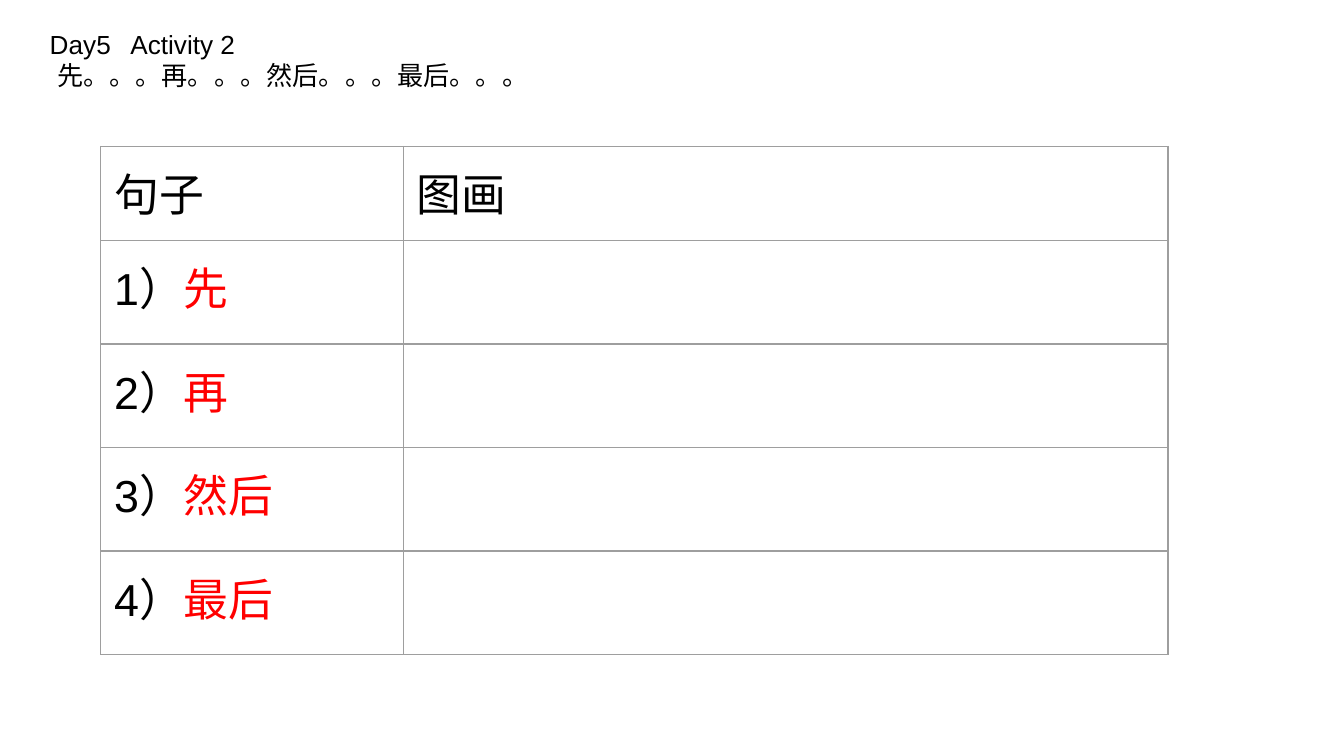
"""Build the Day5 activity slide: a heading and a sentence and drawing table."""
from lxml.etree import SubElement
from pptx import Presentation
from pptx.dml.color import RGBColor
from pptx.enum.text import MSO_ANCHOR, MSO_AUTO_SIZE, PP_ALIGN
from pptx.oxml.ns import qn
from pptx.util import Inches, Pt

TITLE = "Day5\tActivity 2\v 先。。。再。。。然后。。。最后。。。"
HEADERS = ["句子", "图画"]
SEQUENCE_WORDS = ["先", "再", "然后", "最后"]

FONT = "Arial"
BLACK = RGBColor(0x00, 0x00, 0x00)
RED = RGBColor(0xFF, 0x00, 0x00)
GRAY = RGBColor(0x9E, 0x9E, 0x9E)
MARGIN = Inches(0.1)
COLUMN_WIDTHS = [Inches(2.25), Inches(5.69)]
HEADER_HEIGHT, ROW_HEIGHT = Inches(0.7), Inches(0.77)


def set_font(paragraph, size):
    paragraph.font.name = FONT
    paragraph.font.size = Pt(size)


def set_margins(target):
    target.margin_left = target.margin_right = MARGIN
    target.margin_top = target.margin_bottom = MARGIN


def add_run(paragraph, text, color):
    run = paragraph.add_run()
    run.text = text
    run.font.color.rgb = color


def add_borders(cell):
    properties = cell._tc.get_or_add_tcPr()
    for position, side in enumerate(("lnL", "lnR", "lnT", "lnB")):
        line = properties.makeelement(qn(f"a:{side}"), {"w": str(Pt(0.75))})
        fill = SubElement(line, qn("a:solidFill"))
        SubElement(fill, qn("a:srgbClr"), val=str(GRAY))
        properties.insert(position, line)


def add_title(slide):
    title = slide.shapes.title
    title.left, title.top = Inches(0.27), Inches(0.11)
    title.width, title.height = Inches(9.32), Inches(0.63)
    frame = title.text_frame
    set_margins(frame)
    frame.word_wrap = True
    frame.auto_size = MSO_AUTO_SIZE.NONE
    frame.vertical_anchor = MSO_ANCHOR.TOP
    frame.text = TITLE
    paragraph = frame.paragraphs[0]
    tabs = SubElement(paragraph._p.get_or_add_pPr(), qn("a:tabLst"))
    SubElement(tabs, qn("a:tab"), pos=str(Inches(0.6)), algn="l")
    paragraph.alignment = PP_ALIGN.LEFT
    set_font(paragraph, 14)
    paragraph.font.color.rgb = BLACK


def add_sentence_table(slide):
    rows = [[[(header, BLACK)] for header in HEADERS]]
    rows += [[[(f"{number}）", BLACK), (word, RED)], []]
             for number, word in enumerate(SEQUENCE_WORDS, 1)]
    heights = [HEADER_HEIGHT] + [ROW_HEIGHT] * len(SEQUENCE_WORDS)
    table = slide.shapes.add_table(
        len(rows), len(HEADERS), Inches(0.75), Inches(1.09),
        sum(COLUMN_WIDTHS), sum(heights)).table
    table.first_row = table.horz_banding = False
    for column, width in zip(table.columns, COLUMN_WIDTHS):
        column.width = width
    for row, height, contents in zip(table.rows, heights, rows):
        row.height = height
        for cell, runs in zip(row.cells, contents):
            set_margins(cell)
            cell.fill.background()
            add_borders(cell)
            paragraph = cell.text_frame.paragraphs[0]
            set_font(paragraph, 24)
            for text, color in runs:
                add_run(paragraph, text, color)


def main():
    presentation = Presentation()
    presentation.slide_width = Inches(10)
    presentation.slide_height = presentation.slide_width * 9 // 16
    slide = presentation.slides.add_slide(presentation.slide_layouts[5])
    add_title(slide)
    add_sentence_table(slide)
    presentation.save("out.pptx")


if __name__ == "__main__":
    main()
